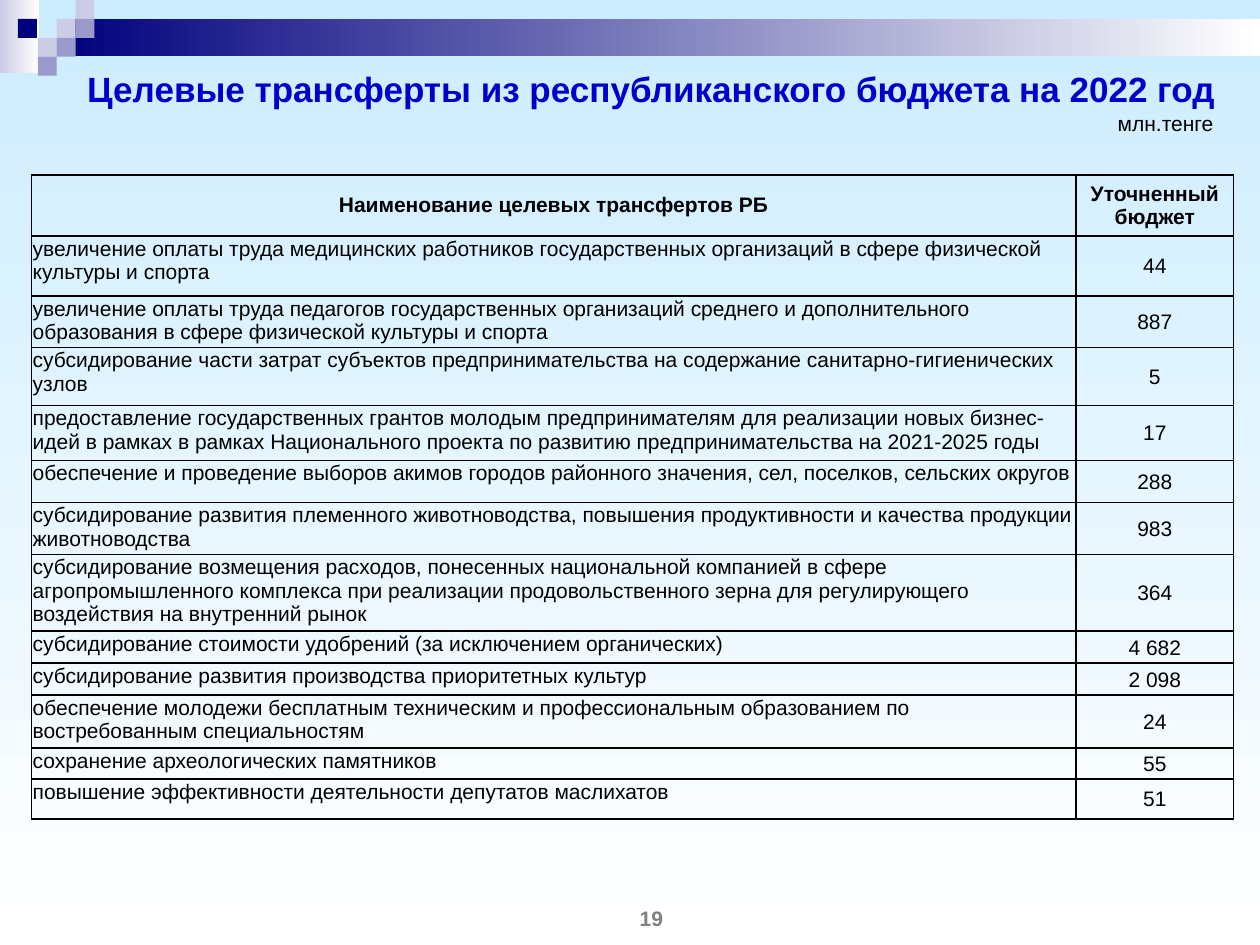
from dataclasses import dataclass

from lxml import etree
from pptx import Presentation
from pptx.dml.color import RGBColor
from pptx.enum.shapes import MSO_SHAPE
from pptx.enum.text import MSO_ANCHOR, PP_ALIGN
from pptx.oxml.ns import qn
from pptx.util import Pt

RECTANGLE = MSO_SHAPE.RECTANGLE
TOP, MIDDLE = MSO_ANCHOR.TOP, MSO_ANCHOR.MIDDLE
LEFT, CENTER = PP_ALIGN.LEFT, PP_ALIGN.CENTER


@dataclass(frozen=True)
class Theme:
    font: str = "Arial"
    title_size: int = 20
    body_size: int = 12
    title: str = "0000CC"
    text: str = "000000"
    page_number: str = "7F7F7F"
    sky: str = "CCECFF"
    white: str = "FFFFFF"
    navy: str = "00007D"
    lavender: str = "CCCCE6"
    violet: str = "9999CC"


theme = Theme()


def write_text(frame, text, size, color, bold=False, align=CENTER):
    frame.word_wrap = True
    paragraph = frame.paragraphs[0]
    paragraph.alignment = align
    run = paragraph.add_run()
    run.text = text
    run.font.name = theme.font
    run.font.size = Pt(size)
    run.font.bold = bold
    run.font.color.rgb = RGBColor.from_string(color)


def fill_gradient(fill, start, end, angle):
    fill.gradient()
    fill.gradient_angle = angle
    for stop, color in zip(fill.gradient_stops, (start, end)):
        stop.color.rgb = RGBColor.from_string(color)


presentation = Presentation()
presentation.slide_width, presentation.slide_height = Pt(720), Pt(540)
slide = presentation.slides.add_slide(presentation.slide_layouts[6])
fill_gradient(slide.background.fill, theme.sky, theme.white, 270)

# Header band: two fading bars, then a mosaic of small squares
TILE = 10.8
header_parts = [
    (0, 0, 22.3, 41.8, theme.lavender, True),
    (32.4, TILE, 687.6, 21.4, theme.navy, True),
]
mosaic = [
    (3, 1, theme.lavender), (4, 0, theme.lavender), (4, 1, theme.violet),
    (2, 2, theme.lavender), (0.95, 1, theme.navy), (3, 2, theme.violet),
    (2, 3, theme.violet),
]
header_parts += [
    (column * TILE, row * TILE, TILE, TILE, color, False)
    for column, row, color in mosaic
]
for left, top, width, height, color, fades in header_parts:
    shape = slide.shapes.add_shape(RECTANGLE, Pt(left), Pt(top), Pt(width), Pt(height))
    shape.shadow.inherit = False
    shape.line.fill.background()
    if fades:
        fill_gradient(shape.fill, color, theme.white, 0)
    else:
        shape.fill.solid()
        shape.fill.fore_color.rgb = RGBColor.from_string(color)

# Title, unit and page number
labels = [
    ("Целевые трансферты из республиканского бюджета на 2022 год",
     28.8, 26.6, 686.9, 48.2, theme.title_size, theme.title, True),
    ("млн.тенге", 616.3, 43.9, 99.4, 53.3, theme.body_size, theme.text, False),
    ("19", 300.2, 509.8, 144, 30.2, theme.body_size, theme.page_number, True),
]
for text, left, top, width, height, size, color, bold in labels:
    box = slide.shapes.add_textbox(Pt(left), Pt(top), Pt(width), Pt(height))
    box.text_frame.vertical_anchor = MIDDLE
    write_text(box.text_frame, text, size, color, bold)

# Table: name, amount, row height
rows = [
    ("Наименование целевых трансфертов РБ", "Уточненный бюджет", 33.7),
    ("увеличение оплаты труда медицинских работников государственных организаций "
     "в сфере физической культуры и спорта", "44", 34.3),
    ("увеличение оплаты труда педагогов государственных организаций среднего и "
     "дополнительного образования в сфере физической культуры и спорта", "887", 27.4),
    ("субсидирование части затрат субъектов предпринимательства на содержание "
     "санитарно-гигиенических узлов", "5", 33.1),
    ("предоставление государственных грантов молодым предпринимателям для реализации "
     "новых бизнес-идей в рамках в рамках Национального проекта по развитию "
     "предпринимательства на 2021-2025 годы", "17", 31.4),
    ("обеспечение и проведение выборов акимов городов районного значения, сел, "
     "поселков, сельских округов", "288", 24),
    ("субсидирование развития племенного животноводства, повышения продуктивности и "
     "качества продукции животноводства", "983", 29.7),
    ("субсидирование возмещения расходов, понесенных национальной компанией в сфере "
     "агропромышленного комплекса при реализации продовольственного зерна для "
     "регулирующего воздействия на внутренний рынок", "364", 41.1),
    ("субсидирование стоимости удобрений (за исключением органических)", "4 682", 18.3),
    ("субсидирование развития производства приоритетных культур", "2 098", 18.3),
    ("обеспечение молодежи бесплатным техническим и профессиональным образованием по "
     "востребованным специальностям", "24", 30.3),
    ("сохранение археологических памятников", "55", 17.7),
    ("повышение эффективности деятельности депутатов маслихатов", "51", 22.9),
]
column_widths = (596.9, 90)
table = slide.shapes.add_table(
    len(rows), len(column_widths), Pt(18), Pt(100),
    Pt(sum(column_widths)), Pt(sum(row[2] for row in rows)),
).table
table.horz_banding = False
for column, width in zip(table.columns, column_widths):
    column.width = Pt(width)

for row_index, (name, amount, height) in enumerate(rows):
    table.rows[row_index].height = Pt(height)
    is_header = row_index == 0
    for column_index, text in enumerate((name, amount)):
        cell = table.cell(row_index, column_index)
        is_name = column_index == 0 and not is_header
        cell.vertical_anchor = TOP if is_name else MIDDLE
        cell.margin_left = cell.margin_right = Pt(7.2 if is_header else 0.7)
        cell.margin_top = Pt(3 if is_header else 0.7)
        cell.margin_bottom = Pt(3 if is_header else 0)
        write_text(cell.text_frame, text, theme.body_size, theme.text,
                   is_header, LEFT if is_name else CENTER)
        properties = cell._tc.get_or_add_tcPr()
        for side in ("a:lnL", "a:lnR", "a:lnT", "a:lnB"):
            border = etree.SubElement(properties, qn(side), w=str(Pt(1)))
            solid = etree.SubElement(border, qn("a:solidFill"))
            etree.SubElement(solid, qn("a:srgbClr"), val=theme.text)
        cell.fill.background()

presentation.save("out.pptx")
